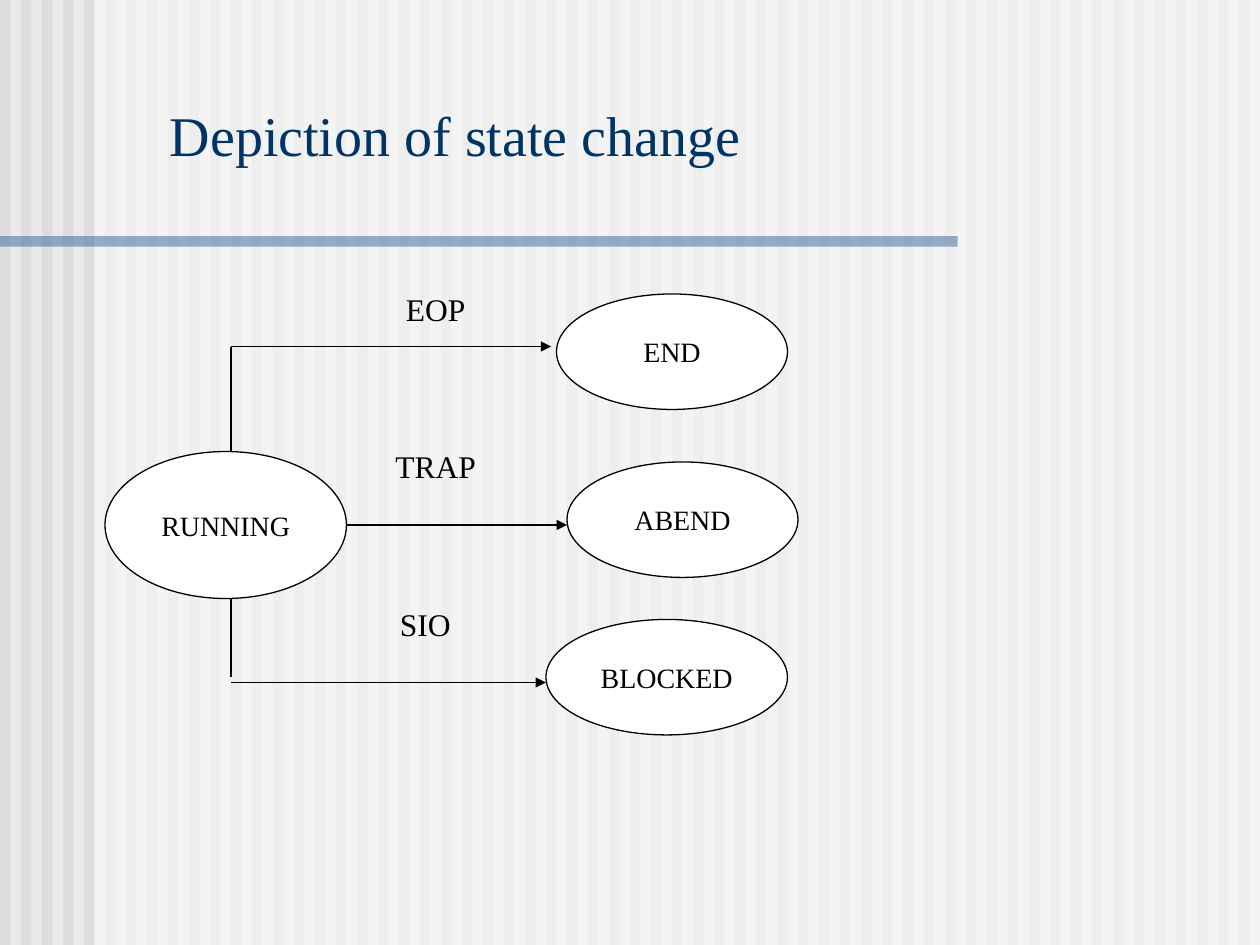
from dataclasses import dataclass

from lxml import etree
from pptx import Presentation
from pptx.dml.color import RGBColor as Rgb
from pptx.enum import shapes as kinds, text as txt
from pptx.oxml import ns
from pptx.util import Cm, Pt


@dataclass(frozen=True)
class Theme:
    font: str = "Times New Roman"
    back: str = "EAEAEA"
    stripe: str = "DDDDDD"
    white: str = "FFFFFF"
    bar: str = "336699"
    title: str = "003366"
    ink: str = "000000"
    head: int = 32
    label: int = 18
    state: int = 16
    line: float = 0.75


THEME = Theme()
COLS, ROWS = 120, 90


def grid(*units):
    return [Cm(unit * 2.54 / 12) for unit in units]


def write(frame, words, size, color, align):
    para = frame.paragraphs[0]
    para.alignment = align
    run = para.add_run()
    run.text = words
    run.font.name = THEME.font
    run.font.size = Pt(size)
    run.font.color.rgb = Rgb.from_string(color)


def shape(slide, kind, box, color):
    item = slide.shapes.add_shape(kind, *grid(*box))
    item.shadow.inherit = False
    item.fill.solid()
    item.fill.fore_color.rgb = Rgb.from_string(color)
    item.line.fill.background()
    return item


def band(slide, box, color, alpha=100):
    item = shape(slide, kinds.MSO_SHAPE.RECTANGLE, box, color)
    if alpha < 100:
        fill = item.fill._xPr.find(".//" + ns.qn("a:srgbClr"))
        etree.SubElement(fill, ns.qn("a:alpha"), val=str(alpha * 1000))


def state(slide, name, box):
    item = shape(slide, kinds.MSO_SHAPE.OVAL, box, THEME.white)
    item.line.color.rgb = Rgb.from_string(THEME.ink)
    item.line.width = Pt(THEME.line)
    frame = item.text_frame
    frame.word_wrap = False
    frame.vertical_anchor = txt.MSO_ANCHOR.MIDDLE
    write(frame, name, THEME.state, THEME.ink, txt.PP_ALIGN.CENTER)


def link(slide, ends, arrow=False):
    item = slide.shapes.add_connector(kinds.MSO_CONNECTOR.STRAIGHT, *grid(*ends))
    item.line.color.rgb = Rgb.from_string(THEME.ink)
    item.line.width = Pt(THEME.line)
    if arrow:
        etree.SubElement(item.line._get_or_add_ln(), ns.qn("a:tailEnd"), type="triangle")
    etree.SubElement(item._element.spPr, ns.qn("a:effectLst"))


def label(slide, words, box, size, color, align, wrap=True):
    frame = slide.shapes.add_textbox(*grid(*box)).text_frame
    frame.word_wrap = wrap
    write(frame, words, size, color, align)


def backdrop(slide):
    fill = slide.background.fill
    fill.solid()
    fill.fore_color.rgb = Rgb.from_string(THEME.back)
    for left in range(0, COLS, 2):
        band(slide, (left, 0, 1, ROWS), THEME.stripe)
    band(slide, (9, 0, COLS - 9, ROWS), THEME.white, 50)
    band(slide, (0, 22.5, 91.2, 1), THEME.bar, 50)


def main():
    deck = Presentation()
    deck.slide_width, deck.slide_height = grid(COLS, ROWS)
    slide = deck.slides.add_slide(deck.slide_layouts[6])
    backdrop(slide)

    for ends in ((22, 43, 22, 33), (22, 57, 22, 64.5)):
        link(slide, ends)
    for ends in ((22, 33, 52.5, 33), (33, 50, 54, 50), (22, 65, 52, 65)):
        link(slide, ends, arrow=True)

    for name, box in (
        ("RUNNING", (10, 43, 23, 14)),
        ("END", (53, 28, 22, 11)),
        ("ABEND", (54, 44, 22, 11)),
        ("BLOCKED", (52, 59, 23, 11)),
    ):
        state(slide, name, box)

    label(slide, "Depiction of state change", (15, 9, 56.8, 7.6),
          THEME.head, THEME.title, txt.PP_ALIGN.LEFT, wrap=False)
    for words, left, top in (("EOP", 35, 27), ("TRAP", 35, 42), ("SIO", 34, 57)):
        label(slide, words, (left, top, 13, 4.8),
              THEME.label, THEME.ink, txt.PP_ALIGN.CENTER)

    deck.save("out.pptx")


if __name__ == "__main__":
    main()
